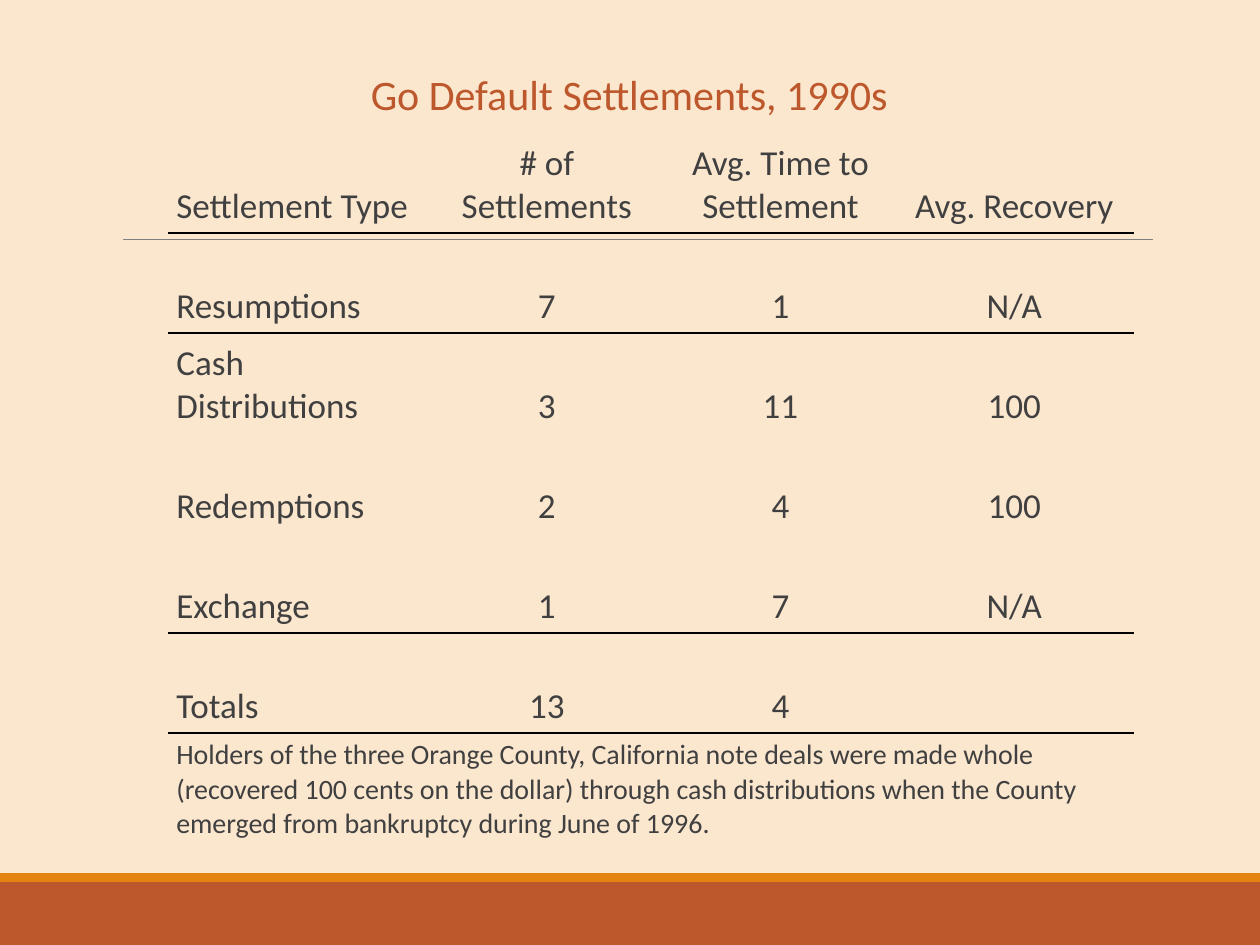
from dataclasses import dataclass

from lxml.etree import SubElement
from pptx import Presentation
from pptx.dml.color import RGBColor
from pptx.enum.shapes import MSO_CONNECTOR as Connector, MSO_SHAPE as Shape
from pptx.enum.text import MSO_ANCHOR as Anchor, PP_ALIGN as Align
from pptx.oxml.ns import qn
from pptx.util import Inches, Pt

COLORS = {
    "background": "FBE6CE",
    "rust": "BD582C",
    "orange": "E48312",
    "text": "404040",
    "rule": "808080",
    "border": "000000",
}
FONT = "Calibri"
NO_STYLE_NO_GRID = "{2D5ABB26-0587-4C30-8999-92F81FD0307C}"


@dataclass
class Band:
    top: float
    height: float
    color: str


@dataclass
class Row:
    label: str
    values: tuple[str, ...]
    ruled_below: bool = False


BANDS = [Band(7, 0.5, "rust"), Band(6.93, 0.07, "orange")]
ROWS = [
    Row("Settlement Type", ("# of Settlements", "Avg. Time to Settlement", "Avg. Recovery"), True),
    Row("Resumptions", ("7", "1", "N/A")),
    Row("Cash Distributions", ("3", "11", "100")),
    Row("Redemptions", ("2", "4", "100")),
    Row("Exchange", ("1", "7", "N/A"), True),
    Row("Totals", ("13", "4", ""), True),
]
NOTE = (
    "Holders of the three Orange County, California note deals were made whole "
    "(recovered 100 cents on the dollar) through cash distributions when the County "
    "emerged from bankruptcy during June of 1996."
)
COLUMN_WIDTHS = [2.06, 1.9, 1.81, 1.9]
TABLE_HEIGHT, HEADER_HEIGHT, NOTE_HEIGHT = 5.67, 0.81, 0.89


def rgb(name: str) -> RGBColor:
    return RGBColor.from_string(COLORS[name])


def add_run(paragraph, text: str, size: float, color: str) -> None:
    run = paragraph.add_run()
    run.text = text
    run.font.name = FONT
    run.font.size = Pt(size)
    run.font.bold = False
    run.font.color.rgb = rgb(color)


def draw_band(slide, band: Band) -> None:
    shape = slide.shapes.add_shape(
        Shape.RECTANGLE, 0, Inches(band.top), Inches(10), Inches(band.height)
    )
    shape.shadow.inherit = False
    shape.fill.solid()
    shape.fill.fore_color.rgb = rgb(band.color)
    shape.line.fill.background()


def draw_rule(slide) -> None:
    rule = slide.shapes.add_connector(
        Connector.STRAIGHT, Inches(0.98), Inches(1.9), Inches(9.15), Inches(1.9)
    )
    rule.line.color.rgb = rgb("rule")
    rule.line.width = Pt(0.5)
    SubElement(rule._element.spPr, qn("a:effectLst"))


def write_title(slide, text: str) -> None:
    title = slide.shapes.title
    title.left, title.top = Inches(1.33), Inches(0.57)
    title.width, title.height = Inches(7.33), Inches(0.43)
    title.text_frame.vertical_anchor = Anchor.MIDDLE
    paragraph = title.text_frame.paragraphs[0]
    paragraph.alignment = Align.CENTER
    paragraph.line_spacing = 0.8
    add_run(paragraph, text, 24, "rust")


def add_border(cell, side: str) -> None:
    properties = cell._tc.get_or_add_tcPr()
    line = SubElement(properties, qn(f"a:{side}"), w=str(Pt(1)))
    fill = SubElement(line, qn("a:solidFill"))
    SubElement(fill, qn("a:srgbClr"), val=COLORS["border"])


def fill_cell(cell, text: str, size: float, align: Align, anchor: Anchor,
              borders: tuple[str, ...]) -> None:
    cell.margin_left = cell.margin_right = Inches(0.07)
    cell.margin_top = cell.margin_bottom = Inches(0.04)
    cell.vertical_anchor = anchor
    for side in borders:
        add_border(cell, side)
    cell.fill.background()
    paragraph = cell.text_frame.paragraphs[0]
    paragraph.alignment = align
    if text:
        add_run(paragraph, text, size, "text")
    else:
        paragraph.font.size = Pt(size)


def draw_table(slide) -> None:
    table = slide.shapes.add_table(
        len(ROWS) + 1, len(COLUMN_WIDTHS), Inches(1.33), Inches(1.04),
        Inches(sum(COLUMN_WIDTHS)), Inches(TABLE_HEIGHT),
    ).table
    table.first_row = table.horz_banding = False
    table._tbl.tblPr.find(qn("a:tableStyleId")).text = NO_STYLE_NO_GRID
    for column, width in zip(table.columns, COLUMN_WIDTHS):
        column.width = Inches(width)
    body_height = (TABLE_HEIGHT - HEADER_HEIGHT - NOTE_HEIGHT) / (len(ROWS) - 1)
    heights = [HEADER_HEIGHT] + [body_height] * (len(ROWS) - 1) + [NOTE_HEIGHT]
    for table_row, height in zip(table.rows, heights):
        table_row.height = Inches(height)

    ruled_above = False
    for row_index, row in enumerate(ROWS):
        borders = ("lnT",) * ruled_above + ("lnB",) * row.ruled_below
        for column_index, text in enumerate((row.label, *row.values)):
            align = Align.CENTER if column_index else Align.LEFT
            fill_cell(table.cell(row_index, column_index), text, 20, align,
                      Anchor.BOTTOM, borders)
        ruled_above = row.ruled_below

    last = len(ROWS)
    note = table.cell(last, 0)
    note.merge(table.cell(last, len(COLUMN_WIDTHS) - 1))
    fill_cell(note, NOTE, 16, Align.LEFT, Anchor.TOP, ("lnT",))


def main() -> None:
    presentation = Presentation()
    presentation.slide_width, presentation.slide_height = Inches(10), Inches(7.5)
    slide = presentation.slides.add_slide(presentation.slide_layouts[5])
    slide.background.fill.solid()
    slide.background.fill.fore_color.rgb = rgb("background")
    for band in BANDS:
        draw_band(slide, band)
    draw_rule(slide)
    write_title(slide, "Go Default Settlements, 1990s")
    draw_table(slide)
    presentation.save("out.pptx")


if __name__ == "__main__":
    main()
